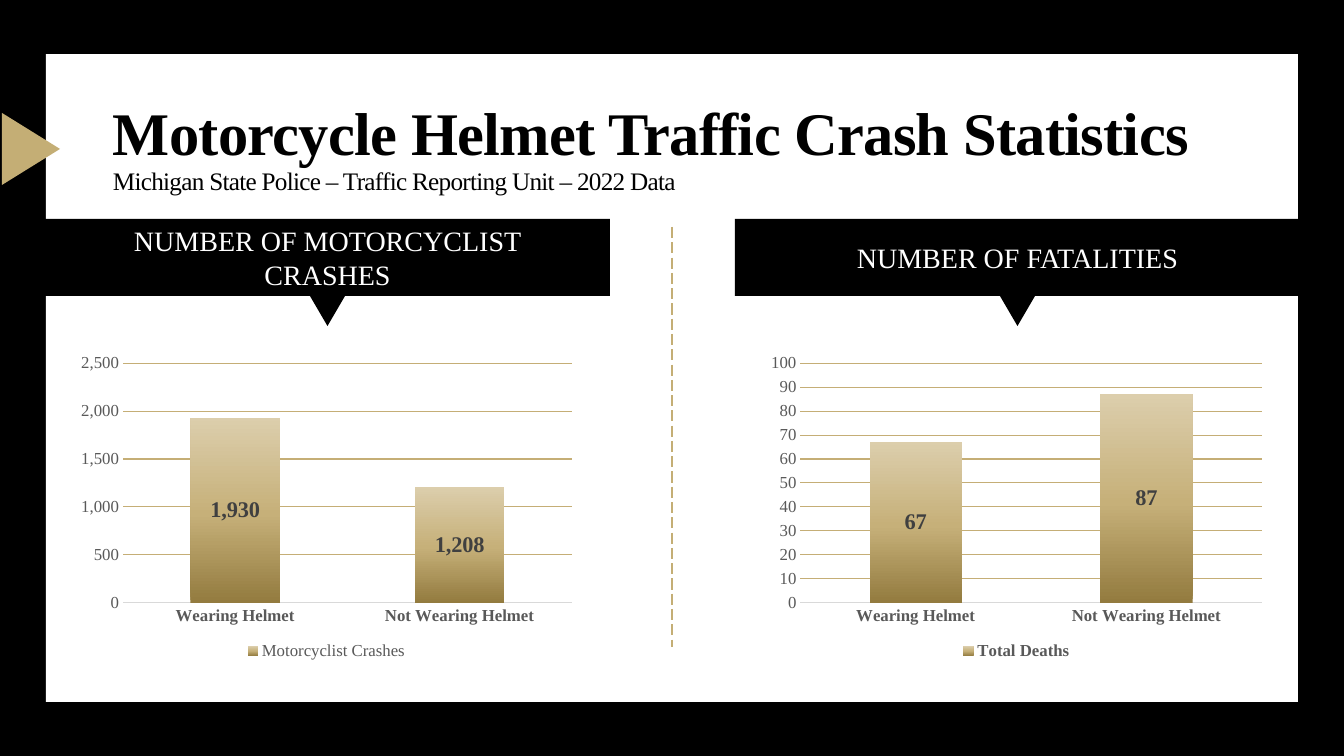
from copy import deepcopy

from pptx import Presentation
from pptx.chart.data import CategoryChartData
from pptx.dml.color import RGBColor
from pptx.enum.chart import XL_CHART_TYPE, XL_LEGEND_POSITION, XL_TICK_MARK
from pptx.enum.dml import MSO_LINE
from pptx.enum.shapes import MSO_CONNECTOR, MSO_SHAPE
from pptx.enum.text import MSO_ANCHOR, PP_ALIGN
from pptx.oxml.ns import qn
from pptx.util import Pt

RECTANGLE = MSO_SHAPE.RECTANGLE
TRIANGLE = MSO_SHAPE.ISOSCELES_TRIANGLE
STRAIGHT = MSO_CONNECTOR.STRAIGHT
STACKED = XL_CHART_TYPE.COLUMN_STACKED
LEGEND_BOTTOM = XL_LEGEND_POSITION.BOTTOM
NO_TICK = XL_TICK_MARK.NONE
LONG_DASH = MSO_LINE.LONG_DASH
MIDDLE = MSO_ANCHOR.MIDDLE
CENTER = PP_ALIGN.CENTER

BLACK = RGBColor(0x00, 0x00, 0x00)
WHITE = RGBColor(0xFF, 0xFF, 0xFF)
GOLD = RGBColor(0xC4, 0xAE, 0x75)
GRID_GOLD = RGBColor(0xC5, 0xAE, 0x76)
AXIS_GRAY = RGBColor(0xD9, 0xD9, 0xD9)
TEXT_GRAY = RGBColor(0x59, 0x59, 0x59)
LABEL_GRAY = RGBColor(0x40, 0x40, 0x40)
COLUMN_STOPS = [
    (0, RGBColor(0x93, 0x7B, 0x3F)),
    (0.48, RGBColor(0xC6, 0xB0, 0x79)),
    (1, RGBColor(0xDC, 0xCE, 0xAC)),
]
FONT = "Times New Roman"
CATEGORIES = ["Wearing Helmet", "Not Wearing Helmet"]


def px(length):
    return round(length * 914400 / 100.8)


def set_font(font, size, color, bold=False):
    font.name = FONT
    font.size = Pt(size)
    font.color.rgb = color
    font.bold = bold


def add_block(slide, preset, box, color, rotation=0):
    block = slide.shapes.add_shape(preset, *map(px, box))
    block.shadow.inherit = False
    block.fill.solid()
    block.fill.fore_color.rgb = color
    block.line.fill.background()
    block.rotation = rotation
    return block


def add_backdrop(slide, box):
    left, top, width, height = box
    slide.background.fill.solid()
    slide.background.fill.fore_color.rgb = BLACK
    add_block(slide, RECTANGLE, box, WHITE)
    add_block(slide, TRIANGLE, (left - 51, top + 66, 72, 58), GOLD, 90)

    center = px(left + width // 2)
    divider = slide.shapes.add_connector(
        STRAIGHT, center, px(top + 173), center, px(top + height - 55))
    divider.line.color.rgb = GOLD
    divider.line.width = Pt(1)
    divider.line.dash_style = LONG_DASH
    properties = divider._element.spPr
    properties.append(properties.makeelement(qn("a:effectLst")))


def add_title(slide, box):
    frame = slide.shapes.add_textbox(*map(px, box)).text_frame
    frame.word_wrap = True
    frame.vertical_anchor = MIDDLE
    heading = frame.paragraphs[0]
    heading.text = ("Motorcycle Helmet Traffic Crash Statistics\v"
                    "Michigan State Police – Traffic Reporting Unit – 2022 Data")
    heading.line_spacing = 0.9
    for run, size, bold in zip(heading.runs, (43.2, 18), (True, False)):
        set_font(run.font, size, BLACK, bold)
        run.font._element.set("spc", "-50")


def add_banner(slide, box, caption):
    left, top, width, height = box
    banner = add_block(slide, RECTANGLE, box, BLACK)
    frame = banner.text_frame
    frame.word_wrap = True
    frame.vertical_anchor = MIDDLE
    frame.margin_left = frame.margin_right = px(37)
    frame.text = caption
    line = frame.paragraphs[0]
    line.alignment = CENTER
    set_font(line.runs[0].font, 20, WHITE)
    pointer = (left + width // 2 - 17, top + height, 35, 30)
    add_block(slide, TRIANGLE, pointer, BLACK, 180)


def fill_columns(series):
    fill = series.format.fill
    fill.gradient()
    fill.gradient_angle = 90
    stop_list = next(series._element.iter(qn("a:gsLst")))
    stop_list.append(deepcopy(stop_list[0]))
    for stop, (position, color) in zip(fill.gradient_stops, COLUMN_STOPS):
        stop.position = position
        stop.color.rgb = color


def add_column_chart(slide, box, name, values, maximum, step, number_format, bold_legend):
    data = CategoryChartData(number_format=number_format)
    data.categories = CATEGORIES
    data.add_series(name, values)
    chart = slide.shapes.add_chart(STACKED, *map(px, box), data).chart
    set_font(chart.font, 10, BLACK)
    chart.has_title = False
    chart.has_legend = True
    chart.legend.position = LEGEND_BOTTOM
    chart.legend.include_in_layout = False
    set_font(chart.legend.font, 12, TEXT_GRAY, bold_legend)

    category_axis, value_axis = chart.category_axis, chart.value_axis
    for axis, bold in ((category_axis, True), (value_axis, False)):
        axis.major_tick_mark = axis.minor_tick_mark = NO_TICK
        set_font(axis.tick_labels.font, 12, TEXT_GRAY, bold)
    category_axis.format.line.color.rgb = AXIS_GRAY
    category_axis.format.line.width = Pt(0.75)
    value_axis.format.line.fill.background()
    value_axis.minimum_scale = 0
    value_axis.maximum_scale = maximum
    value_axis.major_unit = step
    value_axis.tick_labels.number_format = number_format
    value_axis.tick_labels.number_format_is_linked = False
    gridline = value_axis.major_gridlines.format.line
    gridline.color.rgb = GRID_GOLD
    gridline.width = Pt(0.75)

    plot = chart.plots[0]
    plot.vary_by_categories = False
    plot.gap_width = 150
    plot.overlap = 100
    fill_columns(plot.series[0])
    labels = plot.series[0].data_labels
    labels.show_value = True
    labels.number_format = number_format
    labels.number_format_is_linked = False
    set_font(labels.font, 16, LABEL_GRAY, True)


def add_statistic(slide, box, caption, *chart_details):
    left, top, width, height = box
    add_banner(slide, (left, top, width, 77), caption)
    chart_box = (left + 26, top + 129, width - 54, height - 129)
    add_column_chart(slide, chart_box, *chart_details)


def main():
    deck = Presentation()
    deck.slide_width, deck.slide_height = px(1344), px(756)
    slide = deck.slides.add_slide(deck.slide_layouts[6])
    add_backdrop(slide, (46, 54, 1252, 648))
    add_statistic(slide, (45, 219, 565, 445), "NUMBER OF MOTORCYCLIST CRASHES",
                  "Motorcyclist Crashes", (1930, 1208), 2500, 500, "#,##0", False)
    add_statistic(slide, (735, 219, 565, 445), "NUMBER OF FATALITIES",
                  "Total Deaths", (67, 87), 100, 10, "General", True)
    add_title(slide, (103, 99, 1125, 101))
    deck.save("out.pptx")


if __name__ == "__main__":
    main()
